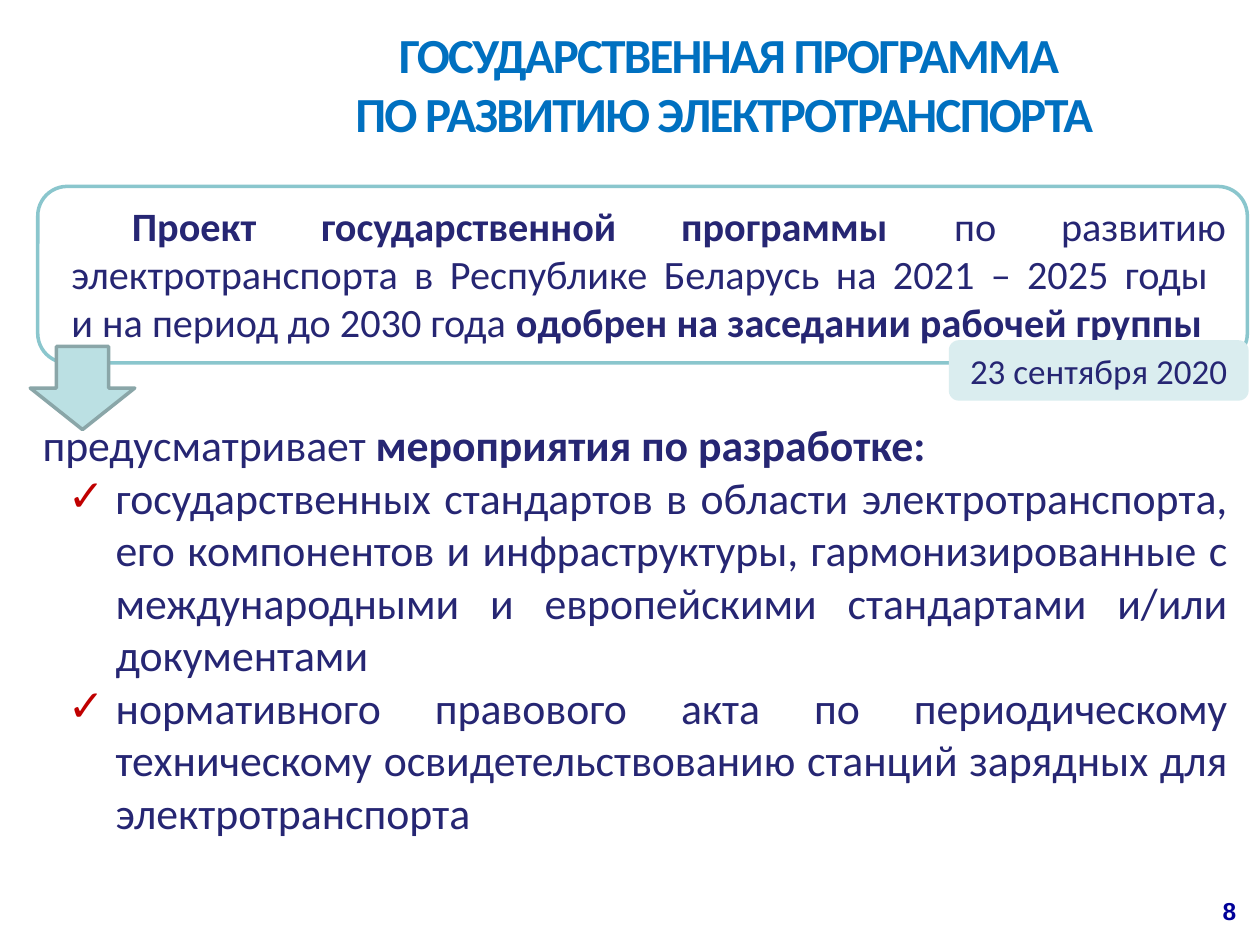
from lxml import etree
from pptx import Presentation
from pptx.dml.color import RGBColor
from pptx.enum import shapes, text
from pptx.oxml.ns import qn
from pptx.util import Inches, Pt

NAVY, BLUE, RED = "262673", "0070C0", "C00000"
ALIGN = text.PP_ALIGN
KIND = shapes.MSO_SHAPE

TITLE = [("ГОСУДАРСТВЕННАЯ ПРОГРАММА\nПО РАЗВИТИЮ ЭЛЕКТРОТРАНСПОРТА ", True)]
PROJECT = [
    ("Проект государственной программы ", True),
    ("по развитию электротранспорта в Республике Беларусь на 2021 – 2025 годы \n"
     "и на период до 2030 года ", False),
    ("одобрен на заседании рабочей группы", True),
]
DATE = [("23 сентября 2020", False)]
INTRO = [("предусматривает ", False), ("мероприятия по разработке:", True)]
MEASURES = [
    "государственных стандартов в области электротранспорта, его компонентов "
    "и инфраструктуры, гармонизированные с международными и европейскими "
    "стандартами и/или документами",
    "нормативного правового акта по периодическому техническому "
    "освидетельствованию станций зарядных для электротранспорта",
]
PAGE_NUMBER = [("8", True)]


def color(value):
    return RGBColor.from_string(value)


def add_box(slide, place, anchor=text.MSO_ANCHOR.TOP):
    box = slide.shapes.add_textbox(*map(Inches, place))
    box.text_frame.word_wrap = True
    box.text_frame.vertical_anchor = anchor
    return box


def add_shape(slide, kind, place, fill, line=None):
    shape = slide.shapes.add_shape(kind, *map(Inches, place))
    shape.shadow.inherit = False
    shape.fill.solid()
    shape.fill.fore_color.rgb = color(fill)
    if line:
        shape.line.color.rgb = color(line)
        shape.line.width = Pt(2)
    else:
        shape.line.fill.background()
    shape.text_frame.vertical_anchor = text.MSO_ANCHOR.TOP
    return shape


def write(paragraph, parts, size, ink=NAVY, align=ALIGN.LEFT, font="Calibri", spacing=None):
    paragraph.alignment = align
    for words, bold in parts:
        for index, line in enumerate(words.split("\n")):
            if index:
                paragraph.add_line_break()
            run = paragraph.add_run()
            run.text = line
            run.font.size = Pt(size)
            run.font.name = font
            run.font.bold = bold
            run.font.color.rgb = color(ink)
            if spacing:
                run.font._element.set("spc", str(spacing * 100))


def indent(paragraph, left, first):
    properties = paragraph._p.get_or_add_pPr()
    properties.set("marL", str(Inches(left)))
    properties.set("indent", str(Inches(first)))
    return properties


def add_bullet(paragraph):
    properties = indent(paragraph, 0.58, -0.38)
    bullet_color = etree.SubElement(properties, qn("a:buClr"))
    etree.SubElement(bullet_color, qn("a:srgbClr"), val=RED)
    etree.SubElement(properties, qn("a:buFont"), typeface="Arial")
    etree.SubElement(properties, qn("a:buChar"), char="✓")


def main():
    presentation = Presentation()
    presentation.slide_width = Inches(10)
    presentation.slide_height = Inches(7.5)
    slide = presentation.slides.add_slide(presentation.slide_layouts[6])

    number = add_box(slide, (9.31, 7.06, 0.6, 0.33))
    write(number.text_frame.paragraphs[0], PAGE_NUMBER, 14, "000099", ALIGN.RIGHT, "Arial")

    project = add_shape(slide, KIND.ROUNDED_RECTANGLE, (0.3, 1.48, 9.6, 1.4), "FFFFFF", "8AC6CD")
    paragraph = project.text_frame.paragraphs[0]
    indent(paragraph, 0.1, 0.48)
    write(paragraph, PROJECT, 23, align=ALIGN.JUSTIFY)

    title = add_box(slide, (1.57, 0.14, 8.43, 1.04), text.MSO_ANCHOR.MIDDLE)
    write(title.text_frame.paragraphs[0], TITLE, 28, BLUE, ALIGN.CENTER, spacing=-1)

    add_shape(slide, KIND.DOWN_ARROW, (0.24, 2.75, 0.83, 0.66), "BBE0E3", "8AA6A8")

    measures = add_box(slide, (0.24, 3.27, 9.6, 3.47)).text_frame
    write(measures.paragraphs[0], INTRO, 25)
    for measure in MEASURES:
        paragraph = measures.add_paragraph()
        add_bullet(paragraph)
        write(paragraph, [(measure, False)], 25, align=ALIGN.JUSTIFY)

    date = add_shape(slide, KIND.ROUNDED_RECTANGLE, (7.53, 2.7, 2.38, 0.48), "DAEDEF")
    write(date.text_frame.paragraphs[0], DATE, 20, align=ALIGN.CENTER)

    presentation.save("out.pptx")


if __name__ == "__main__":
    main()
